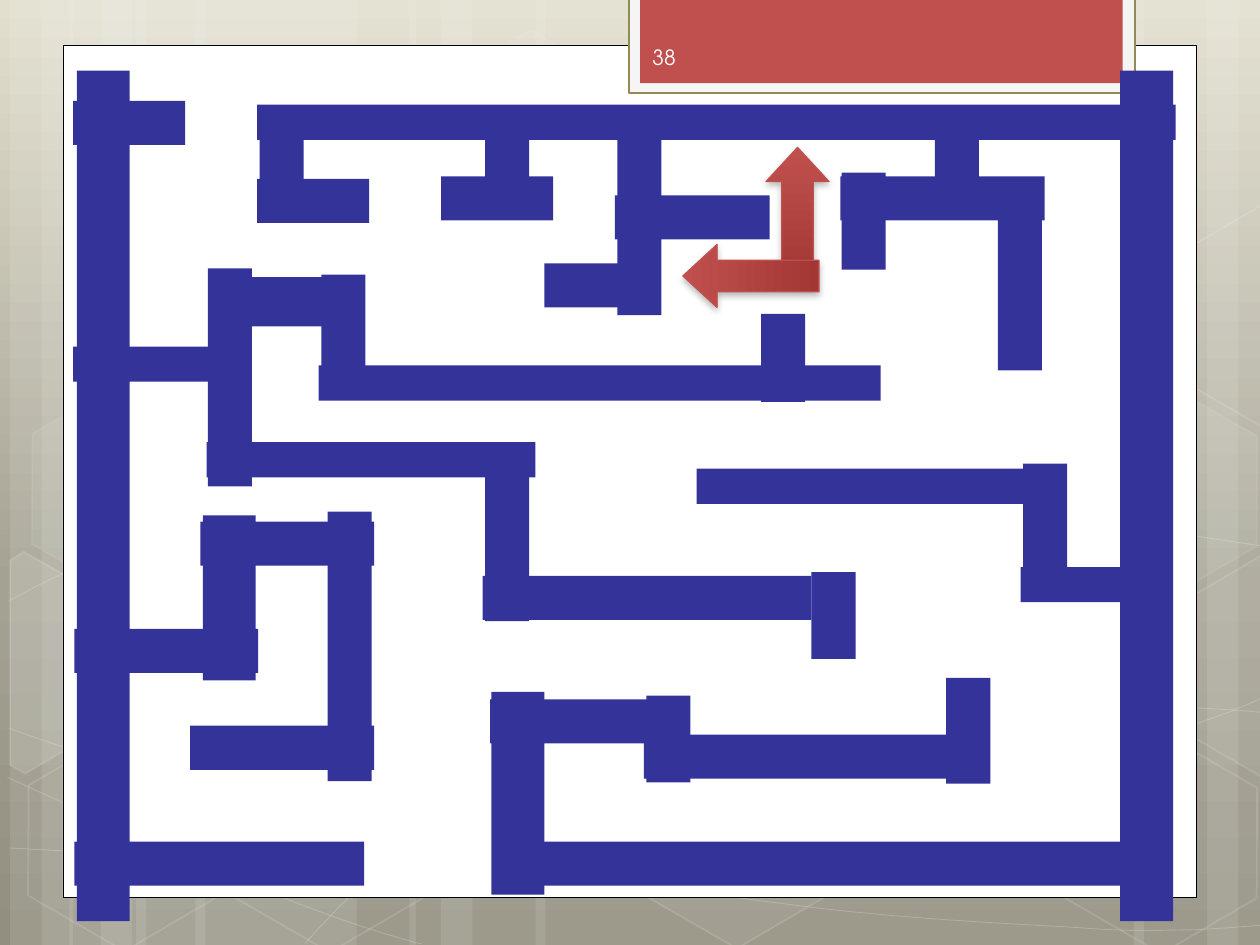
from lxml import etree
from pptx import Presentation
from pptx.dml.color import RGBColor
from pptx.enum import shapes, text
from pptx.oxml.ns import qn
from pptx.util import Inches, Pt

WHITE = RGBColor(0xFF, 0xFF, 0xFF)
BLACK = RGBColor(0, 0, 0)
NEAR_WHITE = RGBColor(0xFE, 0xFE, 0xFE)
FRAME = RGBColor(0xF5, 0xF5, 0xF5)
OLIVE = RGBColor(0x94, 0x8A, 0x54)
RED = RGBColor(0xC0, 0x50, 0x4D)
DARK_RED = RGBColor(0xA2, 0x37, 0x34)
WALL = RGBColor(0x33, 0x33, 0x99)
SAND = RGBColor(0xE2, 0xDF, 0xCF)
STONE = RGBColor(0xA5, 0xA2, 0x93)
DARK_STONE = RGBColor(0x92, 0x8F, 0x80)
FONT = "TeX Gyre Adventor"
SHAPE = shapes.MSO_SHAPE

# Left, width of the translucent stripes
STRIPES = [
    (1.08, 1.75), (0.08, 0.5), (0.33, 0.83), (1.55, 1.75), (0.55, 0.5), (0.8, 0.83),
    (7.33, 1.75), (9.58, 0.5), (9, 0.83), (4.25, 3.08), (3.25, 0.5), (3.5, 0.83),
]
# Start point, then two control points and an end point for each Bezier segment
CURVES = [
    [(0.07, 6.73), (0.61, 6.76), (1.15, 6.79), (1.9, 6.78), (2.65, 6.77), (3.58, 6.75),
     (4.58, 6.65), (5.58, 6.55), (7, 6.36), (7.92, 6.17), (8.83, 5.98), (9.77, 5.68),
     (10.07, 5.51)],
    [(0.07, 4.77), (0.36, 4.61), (0.65, 4.46), (1.21, 4.31), (1.78, 4.16), (2.59, 3.94),
     (3.47, 3.87), (4.36, 3.8), (5.44, 3.79), (6.54, 3.87), (7.64, 3.95), (9.47, 4.26),
     (10.07, 4.34)],
    [(0.06, 6.17), (1.27, 6.72), (2.47, 7.27), (3.34, 7.49)],
    [(0.07, 5.78), (0.38, 5.89), (0.7, 6), (1.28, 6.16), (1.86, 6.31), (2.73, 6.56),
     (3.57, 6.73), (4.4, 6.9), (5.45, 7.08), (6.28, 7.18), (7.11, 7.29), (8, 7.33),
     (8.53, 7.36), (9.05, 7.4), (9.19, 7.38), (9.45, 7.38), (9.71, 7.37), (9.89, 7.35),
     (10.07, 7.34)],
    [(2.42, 7.49), (2.6, 7.29), (2.78, 7.09), (3.02, 6.91), (3.26, 6.73), (3.6, 6.53),
     (3.88, 6.39), (4.16, 6.25), (4.33, 6.19), (4.7, 6.09), (5.06, 5.99), (5.73, 5.85),
     (6.08, 5.78), (6.44, 5.71), (6.49, 5.71), (6.8, 5.69), (7.11, 5.66), (7.6, 5.63),
     (7.94, 5.62), (8.29, 5.61), (8.86, 5.62), (8.86, 5.62), (8.86, 5.62), (9.53, 5.62),
     (9.53, 5.62), (9.71, 5.63), (9.88, 5.64), (9.97, 5.65), (10.06, 5.66), (10.03, 5.65),
     (10.06, 5.66)],
]
# Left, top, fill opacity, line opacity
HEXAGONS = [
    (3.34, 0.36, 4, 8), (4.97, 5.89, 6, 12), (0.11, 5.91, 0, 12), (0.14, 3.12, 7, 8),
    (1.74, 5.92, 0, 12), (7.53, 4.53, 10, 12), (8.34, 5.93, 0, 12), (8.34, 3.14, 7, 8),
]
# Fill opacity, outline of the hexagons cut by the slide edge
CUT_HEXAGONS = [
    (10, [(0.08, 4.45), (0.19, 4.38), (0.96, 4.82), (0.95, 5.7), (0.2, 6.14), (0.08, 6.07)]),
    (4, [(9.26, 4.85), (10.01, 4.41), (10.09, 4.46), (10.09, 6.13), (10.02, 6.17), (9.26, 5.73)]),
    (0, [(9.26, 2.07), (10.01, 1.63), (10.1, 1.68), (10.09, 3.35), (10.02, 3.39), (9.26, 2.95)]),
]
# Left, top, length of the walls, grouped by thickness
HORIZONTAL_WALLS = {
    0.28: [(2.53, 2.9, 4.46), (5.53, 3.72, 2.76), (2.04, 0.83, 7.29), (0.58, 2.75, 1.38),
           (1.64, 3.51, 2.61), (8.1, 4.5, 1.15)],
    0.35: [(0.59, 6.68, 2.3), (3.83, 4.57, 2.61), (0.59, 4.99, 1.46), (1.59, 4.14, 1.38),
           (6.67, 1.4, 1.62), (1.51, 5.76, 1.46), (3.89, 5.55, 1.53), (4.12, 6.68, 5.14),
           (4.32, 2.09, 0.89), (5.11, 5.83, 2.61), (4.88, 1.55, 1.23), (3.5, 1.4, 0.89),
           (2.04, 1.42, 0.89), (0.58, 0.8, 0.89)],
    0.39: [(1.74, 2.2, 1.12)],
}
VERTICAL_WALLS = {
    0.35: [(6.44, 4.54, 0.69), (7.51, 5.38, 0.84), (6.68, 1.37, 0.77), (2.55, 2.18, 0.97),
           (1.65, 2.13, 1.73), (3.85, 3.67, 1.26), (2.6, 4.06, 2.14), (2.06, 0.92, 0.69),
           (7.42, 0.92, 0.65), (7.92, 1.55, 1.39), (5.13, 5.52, 0.69), (8.12, 3.68, 0.99),
           (6.04, 2.49, 0.7), (4.9, 0.95, 1.55), (3.85, 1.06, 0.65)],
    0.42: [(8.89, 0.56, 6.75), (0.61, 0.56, 6.75), (1.61, 4.09, 1.31), (3.9, 5.49, 1.61)],
}


def set_opacity(parent, percent):
    for color in parent.iter(qn("a:srgbClr")):
        etree.SubElement(color, qn("a:alpha"), val=str(percent * 1000))


def paint(shape, fill=None, line=None, width=1, fill_opacity=100, line_opacity=100):
    shape.shadow.inherit = False
    properties = shape.element.spPr
    if fill is None or fill_opacity == 0:
        shape.fill.background()
    else:
        shape.fill.solid()
        shape.fill.fore_color.rgb = fill
        if fill_opacity < 100:
            set_opacity(properties.find(qn("a:solidFill")), fill_opacity)
    if line is None:
        shape.line.fill.background()
    else:
        shape.line.color.rgb = line
        shape.line.width = Pt(width)
        if line_opacity < 100:
            set_opacity(properties.find(qn("a:ln")), line_opacity)


def add_preset(parent, kind, box, rotation=0, **style):
    shape = parent.shapes.add_shape(kind, *map(Inches, box))
    shape.rotation = rotation
    paint(shape, **style)
    return shape


def add_outline(parent, points, close, **style):
    points = [(Inches(x), Inches(y)) for x, y in points]
    builder = parent.shapes.build_freeform(*points[0])
    builder.add_line_segments(points[1:], close=close)
    shape = builder.convert_to_shape()
    paint(shape, **style)
    return shape


def add_curve(parent, nodes, **style):
    """Draw the nodes as an outline, then join every three into one Bezier segment."""
    outline = next(add_outline(parent, nodes, False, **style).element.iter(qn("a:path")))
    segments = outline.findall(qn("a:lnTo"))
    for first in range(0, len(segments), 3):
        bezier = etree.SubElement(outline, qn("a:cubicBezTo"))
        for segment in segments[first:first + 3]:
            bezier.append(segment[0])
            outline.remove(segment)


def add_text(slide, content, box, size, color):
    frame = slide.shapes.add_textbox(*map(Inches, box)).text_frame
    frame.word_wrap = True
    frame.vertical_anchor = text.MSO_ANCHOR.MIDDLE
    run = frame.paragraphs[0].add_run()
    run.text = content
    run.font.name, run.font.size, run.font.color.rgb = FONT, Pt(size), color


def set_gradient(fill, first, last):
    """Run the gradient from the first colour at the top to the last at the bottom."""
    fill.gradient()
    fill.gradient_angle = 270
    for stop, color, position in zip(fill.gradient_stops, (first, last), (0, 1)):
        stop.color.rgb = color
        stop.position = position


def draw_background(slide):
    set_gradient(slide.background.fill, SAND, DARK_STONE)
    middle = etree.Element(qn("a:gs"), pos="62000")
    etree.SubElement(middle, qn("a:srgbClr"), val=str(STONE))
    next(slide.element.iter(qn("a:gsLst"))).insert(1, middle)
    group = slide.shapes.add_group_shape()
    for left, width in STRIPES:
        add_preset(group, SHAPE.RECTANGLE, (left, 0, width, 7.5), fill=WHITE, fill_opacity=10)
    for nodes in CURVES:
        add_curve(group, nodes, line=WHITE, width=0.5, line_opacity=20)
    for left, top, fill_opacity, line_opacity in HEXAGONS:
        hexagon = add_preset(group, SHAPE.HEXAGON, (left, top, 1.75, 1.52), 30, fill=WHITE,
                             line=WHITE, fill_opacity=fill_opacity, line_opacity=line_opacity)
        hexagon.adjustments[0] = 0.285
    for opacity, points in CUT_HEXAGONS:
        add_outline(group, points, True, fill=WHITE, line=WHITE, fill_opacity=opacity, line_opacity=12)


def draw_page(slide, left, top, width, height):
    add_preset(slide, SHAPE.RECTANGLE, (left, top, width, height), fill=WHITE, line=BLACK, width=0.5)


def draw_number_tab(slide, left, top, width, height):
    add_preset(slide, SHAPE.RECTANGLE, (left, top, width, height), fill=FRAME, line=OLIVE, width=1.25)
    add_preset(slide, SHAPE.RECTANGLE, (left + 0.09, top, width - 0.19, height - 0.08), fill=RED)
    add_text(slide, "38", (left + 0.09, top + 0.27, 1.46, 0.4), size=12, color=NEAR_WHITE)


def draw_maze(slide):
    group = slide.shapes.add_group_shape()
    for thickness, walls in HORIZONTAL_WALLS.items():
        for left, top, length in walls:
            add_preset(group, SHAPE.RECTANGLE, (left, top, length, thickness), fill=WALL)
    for thickness, walls in VERTICAL_WALLS.items():
        for left, top, length in walls:
            shift = (length - thickness) / 2
            add_preset(group, SHAPE.RECTANGLE, (left - shift, top + shift, length, thickness), 270, fill=WALL)


def draw_arrow(slide, left, top, rotation):
    arrow = add_preset(slide, SHAPE.UP_ARROW, (left, top, 0.5, 1.08), rotation, line=RED, width=0.75)
    arrow.adjustments[0], arrow.adjustments[1] = 0.5, 0.542
    set_gradient(arrow.fill, RED, DARK_RED)
    effects = arrow.element.spPr.find(qn("a:effectLst"))
    shadow = etree.SubElement(effects, qn("a:outerShdw"), blurRad=str(Pt(4)), dist=str(Pt(2)),
                              dir="5400000", rotWithShape="0")
    etree.SubElement(shadow, qn("a:srgbClr"), val=str(BLACK))
    set_opacity(shadow, 28)


def main():
    presentation = Presentation()
    presentation.slide_width, presentation.slide_height = Inches(10), Inches(7.5)
    slide = presentation.slides.add_slide(presentation.slide_layouts[6])
    draw_background(slide)
    draw_page(slide, 0.5, 0.36, 9, 6.76)
    draw_number_tab(slide, 4.99, -0.02, 4.02, 0.76)
    draw_maze(slide)
    draw_arrow(slide, 6.08, 1.17, rotation=0)
    draw_arrow(slide, 5.71, 1.65, rotation=270)
    presentation.save("out.pptx")


if __name__ == "__main__":
    main()
